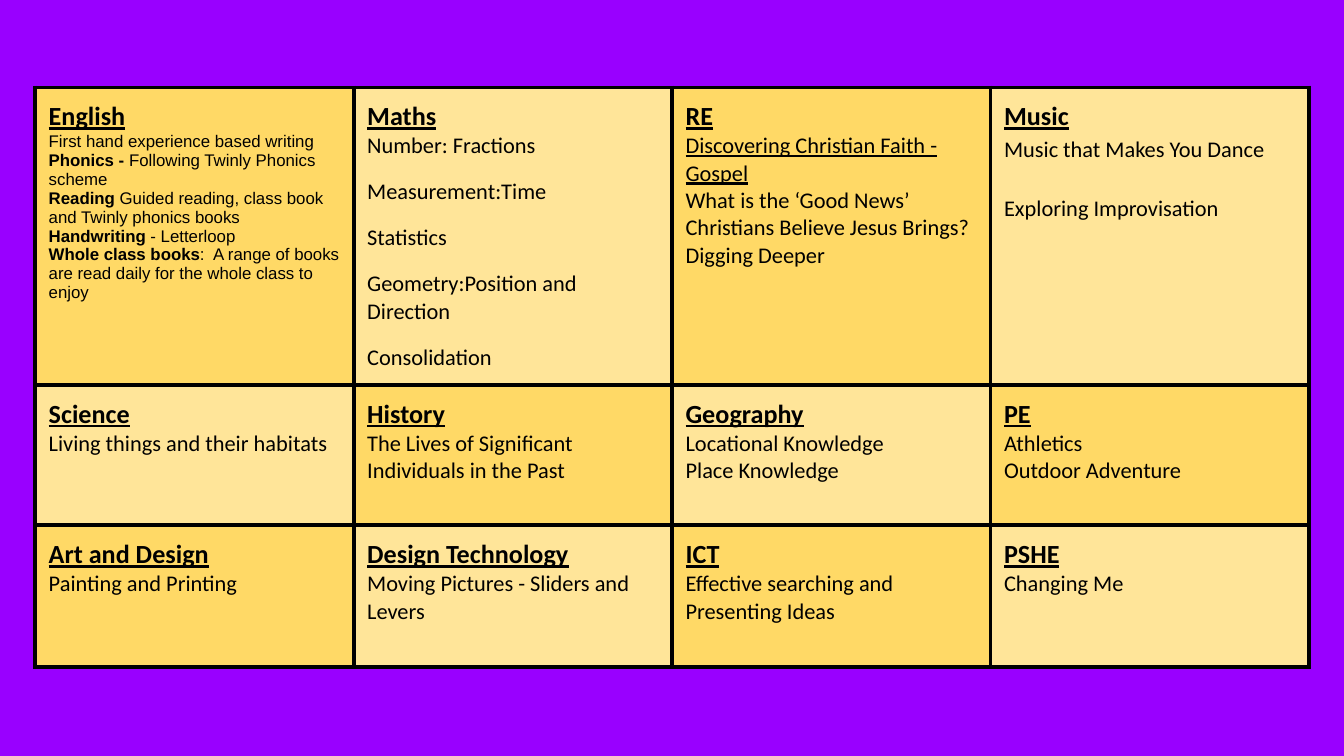
from lxml.etree import SubElement
from pptx import Presentation
from pptx.dml.color import RGBColor
from pptx.oxml.ns import qn
from pptx.util import Pt

PURPLE = RGBColor(0x99, 0x00, 0xFF)
GOLD = RGBColor(0xFF, 0xD9, 0x66)
CREAM = RGBColor(0xFF, 0xE5, 0x99)
BLACK = RGBColor(0x00, 0x00, 0x00)

ROW_HEIGHTS = (Pt(159.4), Pt(75.2), Pt(75.9))
CELL_MARGIN = Pt(7.2)
BORDER_WIDTH = Pt(2.25)

# Double asterisks switch bold on and off within a line.
SUBJECTS = [
    [
        ("English", [
            "First hand experience based writing **Phonics -** Following Twinly Phonics scheme",
            "**Reading **Guided reading, class book and Twinly phonics books",
            "**Handwriting** - Letterloop",
            "**Whole class books**:  A range of books are read daily for the whole class to enjoy",
        ]),
        ("Maths", [
            "Number: Fractions", "Measurement:Time", "Statistics",
            "Geometry:Position and Direction", "Consolidation",
        ]),
        ("RE", [
            "Discovering Christian Faith - Gospel",
            "What is the ‘Good News’ Christians Believe Jesus Brings?",
            "Digging Deeper",
        ]),
        ("Music", ["Music that Makes You Dance", "Exploring Improvisation"]),
    ],
    [
        ("Science", ["Living things and their habitats"]),
        ("History", ["The Lives of Significant Individuals in the Past"]),
        ("Geography", ["Locational Knowledge", "Place Knowledge"]),
        ("PE", ["Athletics", "Outdoor Adventure"]),
    ],
    [
        ("Art and Design", ["Painting and Printing"]),
        ("Design Technology", ["Moving Pictures - Sliders and Levers"]),
        ("ICT", ["Effective searching and Presenting Ideas"]),
        ("PSHE", ["Changing Me"]),
    ],
]

# Subjects whose lines are set differently from the rest.
FONTS = {"English": ("Arial", 9)}
LINE_GAPS = {"Maths": Pt(10), "Music": Pt(14.6)}
LINE_SPACINGS = {"Music": 1.15}
UNDERLINED = {"Discovering Christian Faith - Gospel"}


def set_font(paragraph, name, size, bold=False, underline=False):
    font = paragraph.font
    font.name, font.size = name, Pt(size)
    font.bold, font.underline = bold, underline
    font.color.rgb = BLACK


def add_borders(cell):
    properties = cell._tc.get_or_add_tcPr()
    for side in ("lnL", "lnR", "lnT", "lnB"):
        line = SubElement(properties, qn(f"a:{side}"), w=str(BORDER_WIDTH))
        fill = SubElement(line, qn("a:solidFill"))
        SubElement(fill, qn("a:srgbClr"), val=str(BLACK))


def fill_subject_cell(cell, subject, lines, color):
    cell.margin_left = cell.margin_right = CELL_MARGIN
    cell.margin_top = cell.margin_bottom = CELL_MARGIN
    add_borders(cell)
    cell.fill.solid()
    cell.fill.fore_color.rgb = color

    heading = cell.text_frame.paragraphs[0]
    heading.text = subject
    set_font(heading, "Calibri", 14, bold=True, underline=True)

    name, size = FONTS.get(subject, ("Calibri", 12))
    for index, line in enumerate(lines):
        paragraph = cell.text_frame.add_paragraph()
        set_font(paragraph, name, size, underline=line in UNDERLINED)
        if index and subject in LINE_GAPS:
            paragraph.space_before = LINE_GAPS[subject]
        if subject in LINE_SPACINGS:
            paragraph.line_spacing = LINE_SPACINGS[subject]
        for part, text in enumerate(line.split("**")):
            if text:
                run = paragraph.add_run()
                run.text = text
                if part % 2:
                    run.font.bold = True


def add_subject_table(slide, left, top, width):
    """Place the subjects in a grid coloured like a chessboard."""
    column_count = len(SUBJECTS[0])
    table = slide.shapes.add_table(
        len(SUBJECTS), column_count, left, top, width, sum(ROW_HEIGHTS)
    ).table
    table.first_row = table.horz_banding = False
    for row_index, row in enumerate(SUBJECTS):
        table.rows[row_index].height = ROW_HEIGHTS[row_index]
        for column_index, (subject, lines) in enumerate(row):
            color = CREAM if (row_index + column_index) % 2 else GOLD
            fill_subject_cell(table.cell(row_index, column_index), subject, lines, color)


def main():
    presentation = Presentation()
    presentation.slide_width, presentation.slide_height = Pt(720), Pt(405)
    slide = presentation.slides.add_slide(presentation.slide_layouts[6])
    slide.background.fill.solid()
    slide.background.fill.fore_color.rgb = PURPLE
    add_subject_table(slide, Pt(18.9), Pt(46.8), Pt(682.4))
    presentation.save("out.pptx")


if __name__ == "__main__":
    main()
